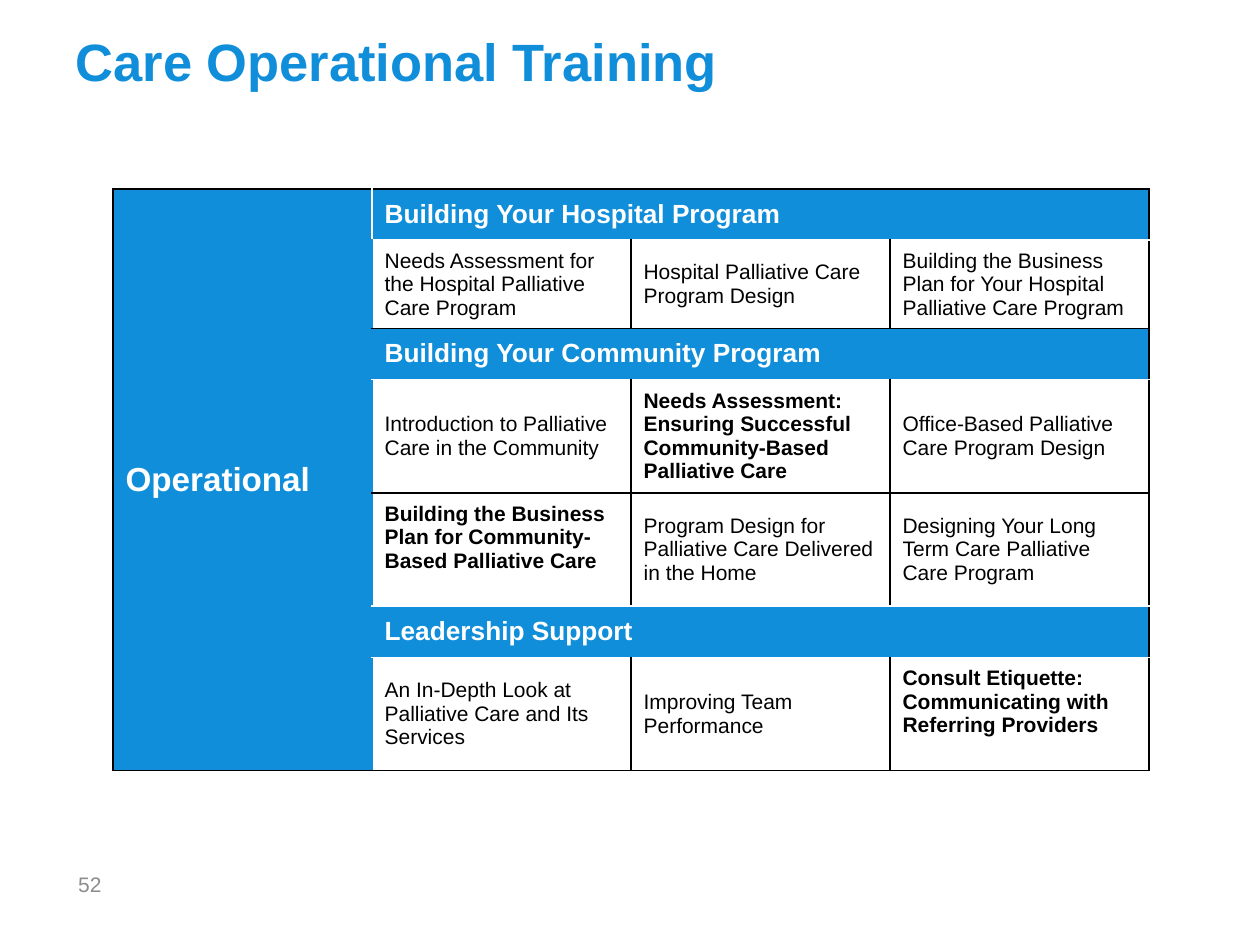
from dataclasses import dataclass

from lxml.etree import SubElement
from pptx import Presentation
from pptx.dml.color import RGBColor
from pptx.enum.text import MSO_ANCHOR, PP_ALIGN
from pptx.oxml.ns import qn
from pptx.slide import Slide
from pptx.util import Pt

BLUE = RGBColor(0x11, 0x8E, 0xD9)
WHITE = RGBColor(0xFF, 0xFF, 0xFF)
BLACK = RGBColor(0x00, 0x00, 0x00)
GREY = RGBColor(0x8C, 0x8C, 0x8C)

TRACK = "Operational"
# One entry is a section heading, three are its courses
COURSE_ROWS = [
    ["Building Your Hospital Program"],
    ["Needs Assessment for the Hospital Palliative Care Program",
     "Hospital Palliative Care Program Design",
     "Building the Business Plan for Your Hospital Palliative Care Program"],
    ["Building Your Community Program"],
    ["Introduction to Palliative Care in the Community",
     "Needs Assessment: Ensuring Successful Community-Based Palliative Care",
     "Office-Based Palliative Care Program Design"],
    ["Building the Business Plan for Community-Based Palliative Care",
     "Program Design for Palliative Care Delivered in the Home",
     "Designing Your Long Term Care Palliative Care Program"],
    ["Leadership Support"],
    ["An In-Depth Look at Palliative Care and Its Services",
     "Improving Team Performance",
     "Consult Etiquette: Communicating with Referring Providers"],
]
ROW_HEIGHTS = [29.2, 50.4, 29.2, 64.8, 64.8, 29.2, 64.8]
ROW_EDGES = [BLACK, WHITE, BLACK, WHITE, BLACK, WHITE, WHITE, BLACK]
COLUMN_WIDTH = 148
# Highlighted courses, as (row, column)
KEY_COURSES = {(3, 2), (4, 1), (6, 3)}
RAISED_COURSES = {(4, 1), (6, 3)}


@dataclass
class TrainingSlide:
    slide: Slide
    font: str = "Arial"

    def set_text(self, frame, text, size, color, bold=False):
        frame.text = text
        frame.word_wrap = True
        paragraph = frame.paragraphs[0]
        paragraph.alignment = PP_ALIGN.LEFT
        font = paragraph.font
        font.name, font.size, font.bold = self.font, Pt(size), bold
        font.color.rgb = color

    def title(self, text, left, top, width, height):
        heading = self.slide.shapes.title
        heading.left, heading.top = Pt(left), Pt(top)
        heading.width, heading.height = Pt(width), Pt(height)
        self.set_text(heading.text_frame, text, 30, BLUE, True)
        heading.text_frame.vertical_anchor = MSO_ANCHOR.MIDDLE

    def label(self, text, left, top, width, height):
        box = self.slide.shapes.add_textbox(
            Pt(left), Pt(top), Pt(width), Pt(height))
        self.set_text(box.text_frame, text, 12, GREY)
        box.text_frame.vertical_anchor = MSO_ANCHOR.MIDDLE

    def cell(self, cell, text, size, color, bold=False):
        self.set_text(cell.text_frame, text, size, color, bold)
        cell.vertical_anchor = MSO_ANCHOR.MIDDLE

    def borders(self, cell, left, right, top, bottom):
        properties = cell._tc.get_or_add_tcPr()
        edges = {"a:lnL": left, "a:lnR": right, "a:lnT": top, "a:lnB": bottom}
        for tag, color in edges.items():
            line = SubElement(properties, qn(tag), w=str(Pt(1)))
            fill = SubElement(line, qn("a:solidFill"))
            SubElement(fill, qn("a:srgbClr"), val=str(color))

    def course_table(self, left, top):
        table = self.slide.shapes.add_table(
            len(COURSE_ROWS), 4, Pt(left), Pt(top),
            Pt(4 * COLUMN_WIDTH), Pt(sum(ROW_HEIGHTS))).table
        table.first_row = table.horz_banding = False
        for column in table.columns:
            column.width = Pt(COLUMN_WIDTH)
        for row, height in zip(table.rows, ROW_HEIGHTS):
            row.height = Pt(height)

        # Track name down the left side
        table.cell(0, 0).merge(table.cell(len(COURSE_ROWS) - 1, 0))
        self.cell(table.cell(0, 0), TRACK, 19, WHITE, True)

        # Section headings and courses
        for r, entries in enumerate(COURSE_ROWS):
            if len(entries) == 1:
                table.cell(r, 1).merge(table.cell(r, 3))
                self.cell(table.cell(r, 1), entries[0], 15, WHITE, True)
                continue
            for c, course in enumerate(entries, start=1):
                cell = table.cell(r, c)
                self.cell(cell, course, 12, BLACK, (r, c) in KEY_COURSES)
                if (r, c) in RAISED_COURSES:
                    cell.margin_bottom = Pt(17.4)

        # Borders and fills; edges inside merged areas stay blue
        for r, entries in enumerate(COURSE_ROWS):
            is_heading = len(entries) == 1
            inner = BLUE if is_heading else BLACK
            column_edges = [BLACK, BLUE if r else WHITE, inner, inner, BLACK]
            for c in range(4):
                cell = table.cell(r, c)
                row_edges = ROW_EDGES if c else [BLACK] + [BLUE] * 6 + [BLACK]
                self.borders(cell, column_edges[c],
                             column_edges[c + cell.span_width],
                             row_edges[r], row_edges[r + cell.span_height])
                cell.fill.solid()
                cell.fill.fore_color.rgb = (
                    BLUE if is_heading or c == 0 else WHITE)


def main():
    deck = Presentation()
    deck.slide_width, deck.slide_height = Pt(720), Pt(540)
    page = TrainingSlide(deck.slides.add_slide(deck.slide_layouts[5]))
    page.title("Care Operational Training", 36, 9.4, 648, 50.4)
    page.course_table(64.6, 108)
    page.label("52", 37.6, 490.3, 37.6, 30.2)
    deck.save("out.pptx")


if __name__ == "__main__":
    main()
